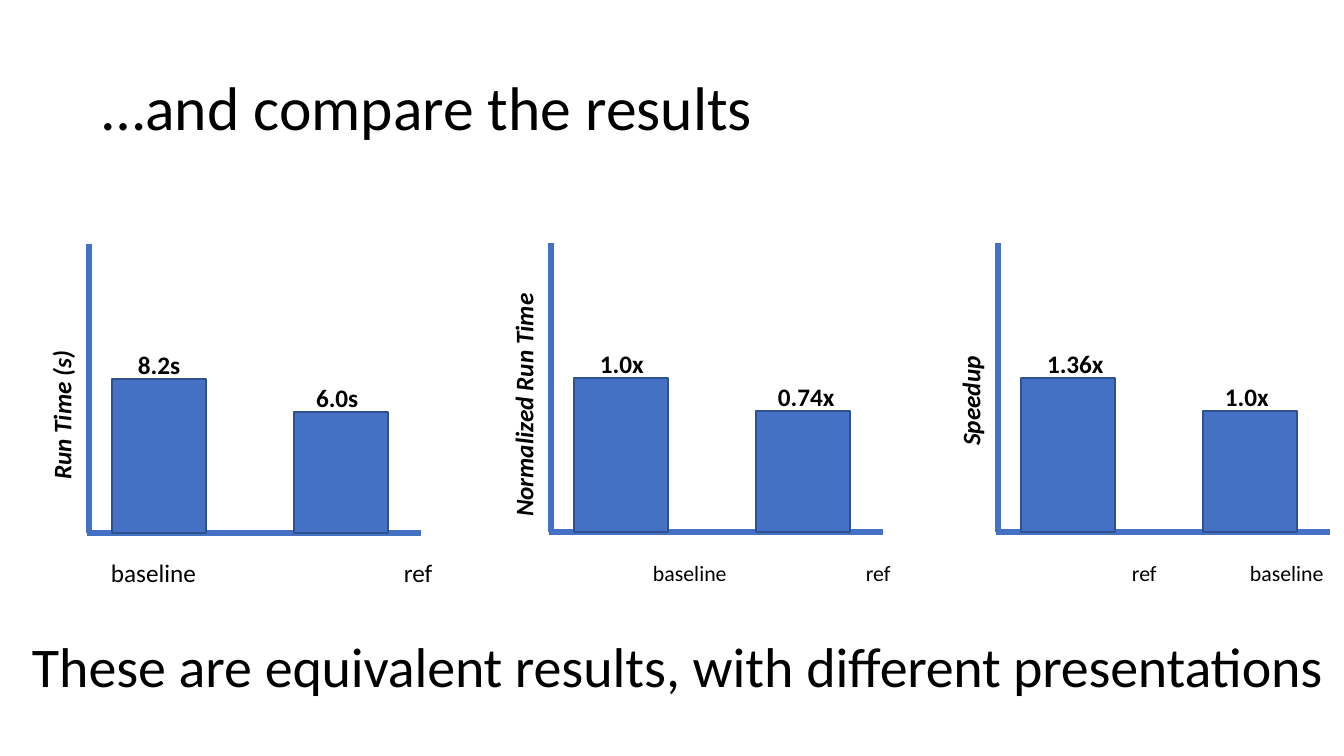
from pptx import Presentation
from pptx.dml.color import RGBColor
from pptx.enum.shapes import MSO_SHAPE
from pptx.enum.text import MSO_ANCHOR, MSO_AUTO_SIZE, PP_ALIGN
from pptx.util import Emu, Pt

FONT = "Calibri"
COLORS = {"text": "000000", "bar": "4471C4", "outline": "2E528F"}
AXIS_WIDTH, AXIS_HEIGHT = 334, 289
BAR_WIDTH = 94
# Offset from the axis origin, height, and offset of the value label
BARS = [(25, 154, 26), (207, 121, 22)]

# Axis title as (text, bottom, length); bars as (value, category, category left)
CHARTS = [
    {"origin": (87, 533), "axis_title": ("Run Time (s)", 480, 140),
     "category_size": 18, "category_top": 557,
     "bars": [("8.2s", "baseline", 111), ("6.0s", "ref", 404)]},
    {"origin": (549, 532), "axis_title": ("Normalized Run Time", 517, 235),
     "category_size": 15.6, "category_top": 560,
     "bars": [("1.0x", "baseline", 653), ("0.74x", "ref", 866)]},
    {"origin": (996, 532), "axis_title": ("Speedup", 446, 100),
     "category_size": 15.6, "category_top": 560,
     "bars": [("1.36x", "ref", 1132), ("1.0x", "baseline", 1250)]},
]
# Text with letter spacing in hundredths of a point
CONCLUSION = [("These are ", 0), ("equivalent ", -10), ("results, with ", 0),
              ("different ", -20), ("presentations", -10)]


def px(length):
    return Emu(round(length * 914400 / 100.8))


def color(name):
    return RGBColor.from_string(COLORS[name])


def write(frame, pieces, size=18, bold=False, italic=False, indent=0,
          vertical=False, line_spacing=None):
    frame.word_wrap = True
    frame.auto_size = MSO_AUTO_SIZE.NONE
    frame.vertical_anchor = MSO_ANCHOR.TOP
    frame.margin_left = px(indent)
    frame.margin_top = frame.margin_right = frame.margin_bottom = 0
    if vertical:
        frame._txBody.bodyPr.set("vert", "vert270")
    paragraph = frame.paragraphs[0]
    paragraph.alignment = PP_ALIGN.LEFT
    paragraph.space_before = Pt(0)
    if line_spacing:
        paragraph.line_spacing = Pt(line_spacing)
    if isinstance(pieces, str):
        pieces = [(pieces, 0)]
    for text, spacing in pieces:
        run = paragraph.add_run()
        run.text = text
        run.font.name = FONT
        run.font.size = Pt(size)
        run.font.bold = bold
        run.font.italic = italic
        run.font.color.rgb = color("text")
        if spacing:
            run.font._element.set("spc", str(spacing))


class ResultsSlide:
    def __init__(self, deck):
        self.slide = deck.slides.add_slide(deck.slide_layouts[5])
        self.shapes = self.slide.shapes

    def title(self, text, left, top, width, height, **style):
        heading = self.shapes.title
        heading.left, heading.top = px(left), px(top)
        heading.width, heading.height = px(width), px(height)
        write(heading.text_frame, text, **style)

    def label(self, text, left, top, width, height, **style):
        caption = self.shapes.add_textbox(px(left), px(top), px(width), px(height))
        write(caption.text_frame, text, **style)

    def axes(self, x, y):
        builder = self.shapes.build_freeform(px(x), px(y))
        builder.add_line_segments([(px(x + AXIS_WIDTH), px(y))], close=False)
        builder.move_to(px(x + 2), px(y))
        builder.add_line_segments([(px(x + 2), px(y - AXIS_HEIGHT))], close=False)
        axes = builder.convert_to_shape()
        axes.shadow.inherit = False
        axes.fill.background()
        axes.line.color.rgb = color("bar")
        axes.line.width = Pt(4.5)

    def bar(self, left, top, width, height):
        bar = self.shapes.add_shape(
            MSO_SHAPE.RECTANGLE, px(left), px(top), px(width), px(height))
        bar.shadow.inherit = False
        bar.fill.solid()
        bar.fill.fore_color.rgb = color("bar")
        bar.line.color.rgb = color("outline")
        bar.line.width = Pt(1)

    def chart(self, origin, axis_title, category_size, category_top, bars):
        x, y = origin
        # Axes and axis title
        self.axes(x, y)
        text, bottom, length = axis_title
        self.label(text, x - 36, bottom - length, 28, length, bold=True,
                   italic=True, vertical=True, line_spacing=18.1)
        # Bars with their values and categories
        for (offset, height, value_offset), (value, category, left) in zip(BARS, bars):
            bar_left, bar_top = x + offset, y - height
            self.bar(bar_left, bar_top, BAR_WIDTH, height)
            self.label(value, bar_left + value_offset, bar_top - 30, 64, 30, bold=True)
            self.label(category, left, category_top, 90, 32, size=category_size)


def main():
    deck = Presentation()
    deck.slide_width, deck.slide_height = px(1344), px(756)
    results = ResultsSlide(deck)

    results.title("…and compare the results", 26, 69, 1291, 77, size=44, indent=77)
    for chart in CHARTS:
        results.chart(**chart)
    # Conclusion
    results.label(CONCLUSION, 32, 632, 1305, 70, size=40)

    deck.save("out.pptx")


if __name__ == "__main__":
    main()
